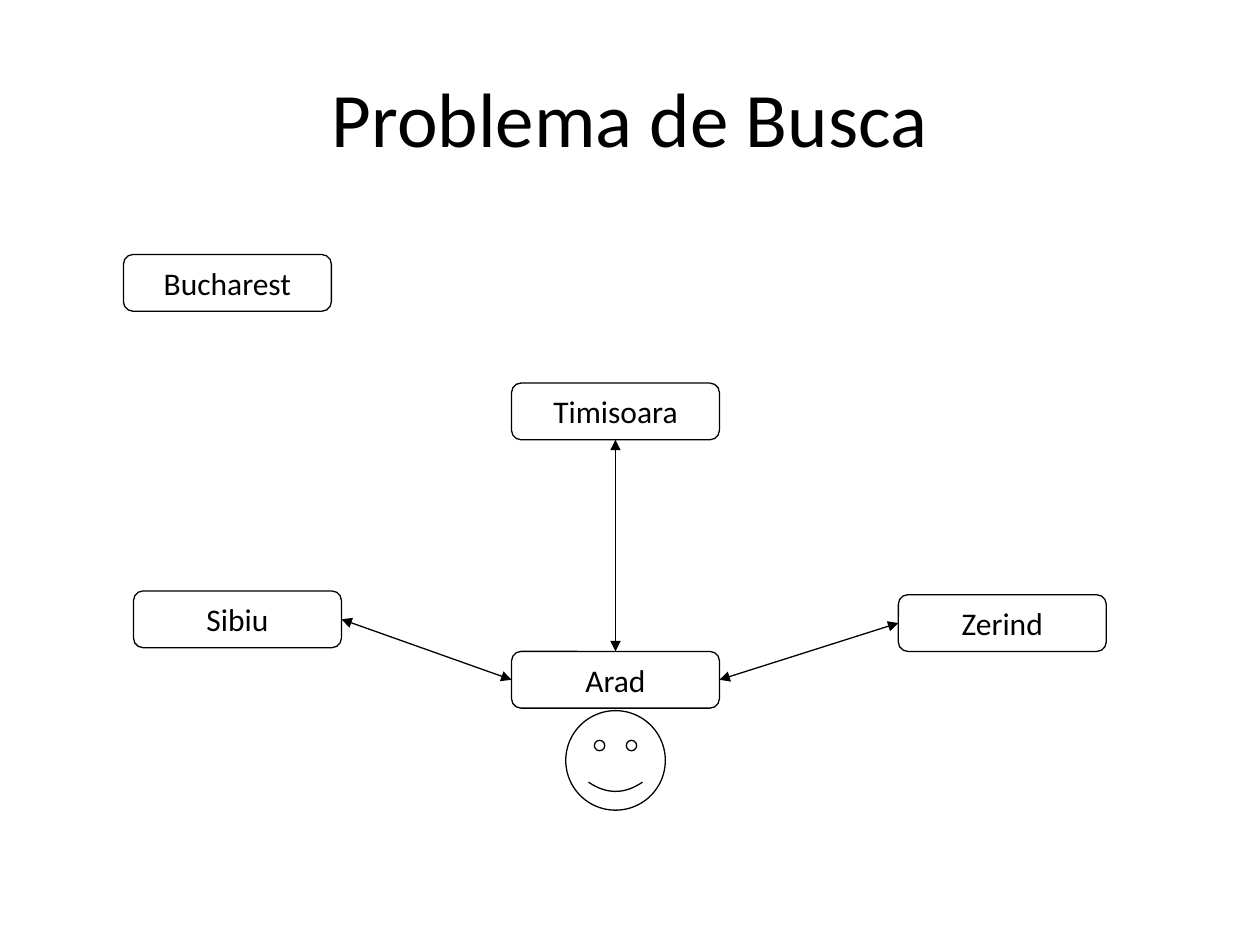
import pptx
import pptx.util
import pptx.dml.color
import pptx.enum.shapes
import pptx.enum.text
import pptx.oxml
import pptx.oxml.ns
from pptx.util import Inches

BLACK = pptx.dml.color.RGBColor(0, 0, 0)
CITY_WIDTH, CITY_HEIGHT = 1.65, 0.45
CITIES = {
    "Bucharest": (0.98, 2.02),
    "Arad": (4.06, 5.17),
    "Sibiu": (1.06, 4.69),
    "Timisoara": (4.06, 3.04),
    "Zerind": (7.13, 4.72),
}
# Connection sites of a rounded rectangle
TOP, LEFT, BOTTOM, RIGHT = range(4)
ROADS = [
    ("Arad", LEFT, "Sibiu", RIGHT),
    ("Arad", TOP, "Timisoara", BOTTOM),
    ("Arad", RIGHT, "Zerind", LEFT),
]
SHAPES = pptx.enum.shapes.MSO_SHAPE


def write_text(shape, text, size, font="Calibri", color=BLACK):
    frame = shape.text_frame
    frame.word_wrap = True
    frame.vertical_anchor = pptx.enum.text.MSO_ANCHOR.MIDDLE
    para = frame.paragraphs[0]
    para.alignment = pptx.enum.text.PP_ALIGN.CENTER
    span = para.add_run()
    span.text = text
    span.font.size = pptx.util.Pt(size)
    span.font.name = font
    span.font.color.rgb = color


def set_line(shape):
    shape.line.color.rgb = BLACK
    shape.line.width = pptx.util.Pt(0.75)


def add_outline(page, preset, left, top, width, height):
    shape = page.shapes.add_shape(
        preset, Inches(left), Inches(top), Inches(width), Inches(height))
    shape.shadow.inherit = False
    shape.fill.background()
    set_line(shape)
    return shape


def add_title(page, left, top, width, height):
    box = page.shapes.add_textbox(
        Inches(left), Inches(top), Inches(width), Inches(height))
    write_text(box, "Problema de Busca", size=44)


def add_city(page, name, left, top):
    city = add_outline(page, SHAPES.ROUNDED_RECTANGLE,
                       left, top, CITY_WIDTH, CITY_HEIGHT)
    write_text(city, name, size=18)
    return city


def add_road(page, start, start_site, end, end_site):
    """Join two cities with an arrow pointing both ways."""
    road = page.shapes.add_connector(
        pptx.enum.shapes.MSO_CONNECTOR.STRAIGHT, 0, 0, 0, 0)
    road.begin_connect(start, start_site)
    road.end_connect(end, end_site)
    set_line(road)
    outline = road.line._get_or_add_ln()
    for tag in ("a:headEnd", "a:tailEnd"):
        outline.append(pptx.oxml.parse_xml(
            f'<{tag} {pptx.oxml.ns.nsdecls("a")} type="triangle"/>'))
    road._element.spPr.append(pptx.oxml.parse_xml(
        f'<a:effectLst {pptx.oxml.ns.nsdecls("a")}/>'))


def add_map(page):
    add_outline(page, SHAPES.SMILEY_FACE, 4.49, 5.64, 0.79, 0.79)
    cities = {name: add_city(page, name, *corner)
              for name, corner in CITIES.items()}
    for start, start_site, end, end_site in ROADS:
        add_road(page, cities[start], start_site, cities[end], end_site)


def main():
    deck = pptx.Presentation()
    deck.slide_width, deck.slide_height = Inches(10), Inches(7.5)
    page = deck.slides.add_slide(deck.slide_layouts[6])
    add_title(page, 0.5, 0.3, 9, 1.25)
    add_map(page)
    deck.save("out.pptx")


if __name__ == "__main__":
    main()
